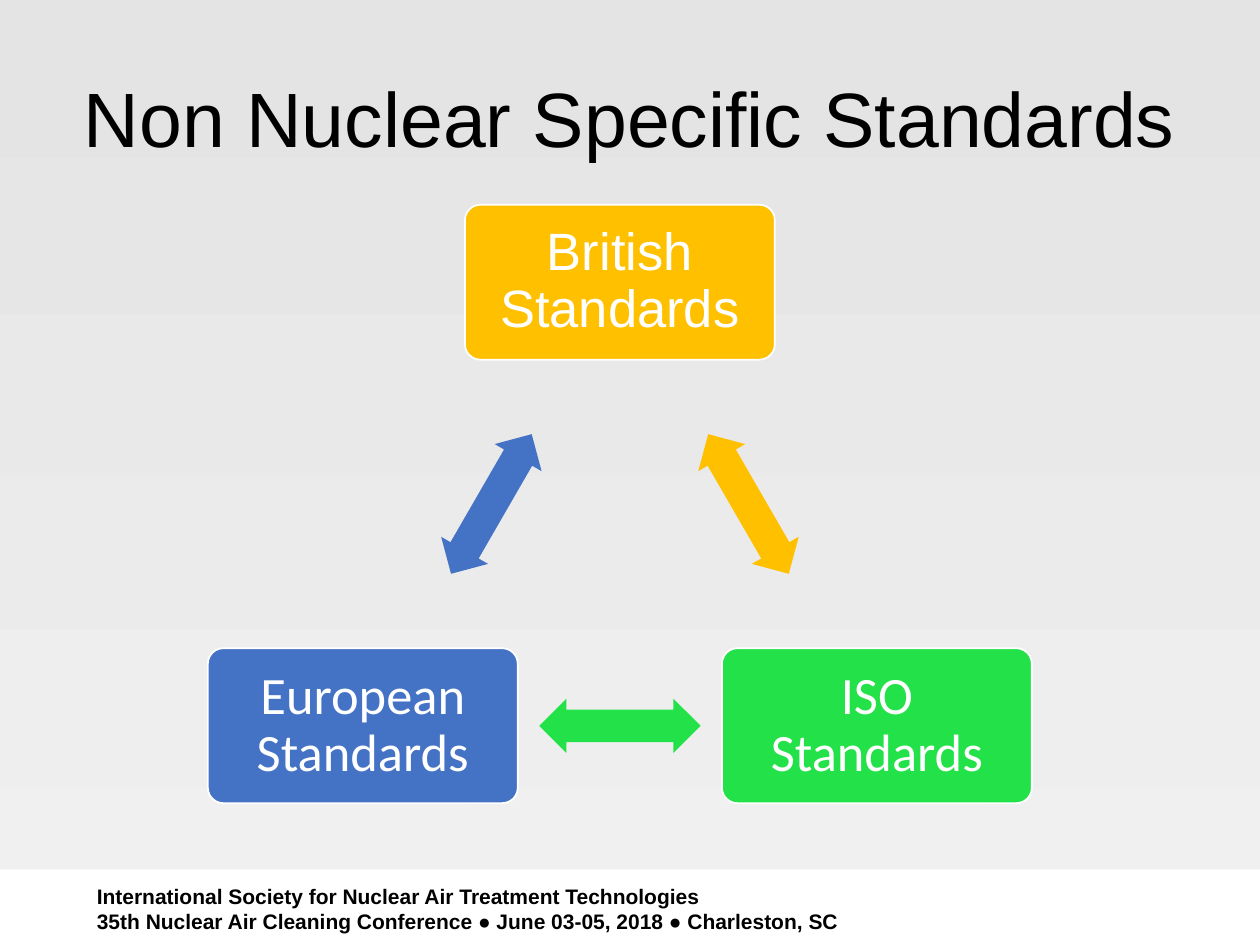
from pptx import Presentation
from pptx.dml.color import RGBColor
from pptx.enum.shapes import MSO_SHAPE
from pptx.enum.text import MSO_ANCHOR, PP_ALIGN
from pptx.util import Inches, Pt

BLACK = RGBColor(0x00, 0x00, 0x00)
WHITE = RGBColor(0xFF, 0xFF, 0xFF)
GOLD = RGBColor(0xFF, 0xC0, 0x00)
GREEN = RGBColor(0x23, 0xE1, 0x48)
BLUE = RGBColor(0x44, 0x72, 0xC4)
TOP = RGBColor(0xE4, 0xE4, 0xE4)
BASE = RGBColor(0xF0, 0xF0, 0xF0)

BOX_W, BOX_H = 2.46, 1.23
ARROW_W, ARROW_H = 1.28, 0.43
MID_X = 4.92

# text, font, colour, centre of the box
NODES = [
    ("British Standards", "Arial", GOLD, (MID_X, 2.24)),
    ("ISO Standards", "Calibri", GREEN, (MID_X + 2.04, 5.76)),
    ("European Standards", "Calibri", BLUE, (MID_X - 2.04, 5.76)),
]


def apply(target, values):
    for name, value in values.items():
        setattr(target, name, value)


def add_shape(slide, kind, at, color):
    shape = slide.shapes.add_shape(kind, *map(Inches, at))
    shape.shadow.inherit = False
    shape.fill.solid()
    shape.fill.fore_color.rgb = color
    shape.line.fill.background()
    return shape


def add_centred(slide, kind, mid, size, color):
    (x, y), (w, h) = mid, size
    return add_shape(slide, kind, (x - w / 2, y - h / 2, w, h), color)


def fill_text(shape, lines, font, color, frame, para):
    """Write one paragraph per line, all in one format."""
    text = shape.text_frame
    apply(text, {"word_wrap": True, **frame})
    text.text = "\n".join(lines)
    for item in text.paragraphs:
        apply(item, para)
        apply(item.font, font)
        item.font.color.rgb = color


def add_text(slide, at, lines, font, frame, para):
    box = slide.shapes.add_textbox(*map(Inches, at))
    fill_text(box, lines, font, BLACK, frame, para)


def add_node(slide, text, face, color, mid):
    box = add_centred(slide, MSO_SHAPE.ROUNDED_RECTANGLE, mid,
                      (BOX_W, BOX_H), color)
    box.adjustments[0] = 0.1
    box.line.color.rgb = WHITE
    box.line.width = Pt(1)
    sides = ("left", "top", "right", "bottom")
    frame = {f"margin_{side}": Inches(0.15) for side in sides}
    frame["vertical_anchor"] = MSO_ANCHOR.MIDDLE
    fill_text(box, [text], {"name": face, "size": Pt(30)}, WHITE, frame,
              {"alignment": PP_ALIGN.CENTER, "line_spacing": 0.9})


def add_arrow(slide, start, end, color, turn):
    """Place a double arrow halfway between two box centres."""
    mid = [(a + b) / 2 for a, b in zip(start, end)]
    arrow = add_centred(slide, MSO_SHAPE.LEFT_RIGHT_ARROW, mid,
                        (ARROW_W, ARROW_H), color)
    arrow.adjustments[0] = 0.6
    arrow.adjustments[1] = 0.5
    arrow.rotation = turn


def add_cycle(slide):
    for i, (text, face, color, mid) in enumerate(NODES):
        after = NODES[(i + 1) % len(NODES)][3]
        add_node(slide, text, face, color, mid)
        add_arrow(slide, mid, after, color, 60 + 120 * i)


def set_back(slide):
    fill = slide.background.fill
    fill.gradient()
    fill.gradient_angle = 270
    for stop, color, place in zip(fill.gradient_stops, (TOP, BASE), (0, 1)):
        stop.color.rgb = color
        stop.position = place


def add_footer(slide):
    add_shape(slide, MSO_SHAPE.RECTANGLE, (0, 6.9, 10, 0.6), WHITE)
    add_text(slide, (0.67, 6.96, 6.42, 0.5),
             ["International Society for Nuclear Air Treatment Technologies",
              "35th Nuclear Air Cleaning Conference ● June 03-05, 2018 ● "
              "Charleston, SC"],
             {"name": "Arial", "size": Pt(12), "bold": True}, {}, {})


def main():
    prs = Presentation()
    prs.slide_width, prs.slide_height = Inches(10), Inches(7.5)
    slide = prs.slides.add_slide(prs.slide_layouts[6])
    set_back(slide)
    add_footer(slide)
    add_text(slide, (0.5, 0.3, 9, 1.25), ["Non Nuclear Specific Standards"],
             {"name": "Arial", "size": Pt(44)},
             {"vertical_anchor": MSO_ANCHOR.MIDDLE},
             {"alignment": PP_ALIGN.CENTER})
    add_cycle(slide)
    prs.save("out.pptx")


if __name__ == "__main__":
    main()
